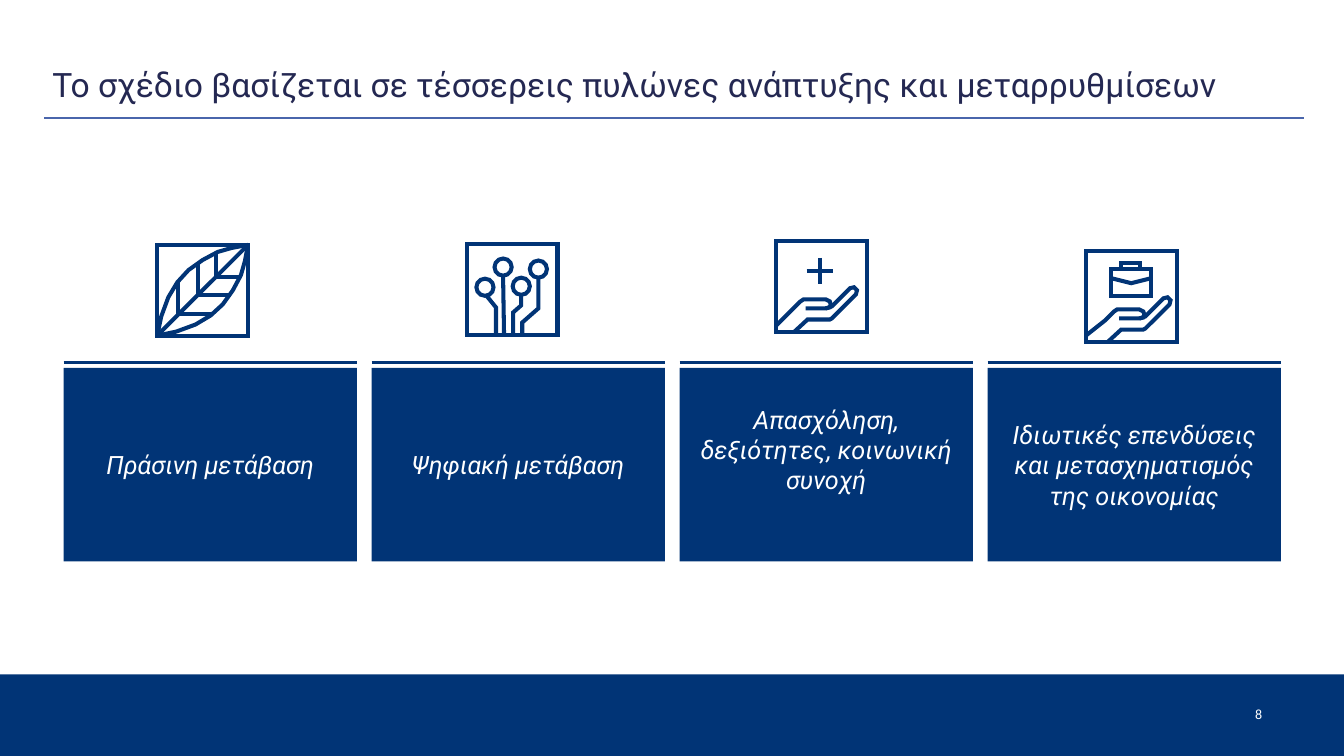
from lxml.etree import SubElement
from pptx import Presentation
from pptx.dml.color import RGBColor
from pptx.enum.shapes import MSO_CONNECTOR, MSO_SHAPE
from pptx.enum.text import MSO_ANCHOR as Anchor, PP_ALIGN as Align
from pptx.oxml.ns import qn
from pptx.util import Inches, Pt

WIDTH, HEIGHT = 13.33, 7.5
COLORS = {"navy": "013476", "title": "242852", "rule": "4A66AC", "white": "FFFFFF"}
CARD_LEFT, CARD_STEP, CARD_WIDTH = 0.63, 3.055, 2.91
CARD_TOP, CARD_HEIGHT, CARD_RULE = 3.65, 1.92, 3.6
ICON_LEFT, ICON_STEP, ICON_UNIT = 1.54, 3.07, 0.01
ICON_LINE = 2.9

FRAME = [(2, 2), (92, 2), (92, 92), (2, 92), (2, 2)]
LEAF_EDGE = [(2, 92), (6, 73), (13, 54), (22, 39), (33, 27),
             (47, 17), (62, 9), (76, 5), (92, 2)]
LEAF_VEINS = [[(23, 38), (23, 71)], [(42, 19), (42, 52)], [(60, 10), (60, 34)]]
CIRCUIT_STEMS = [
    [(38, 33), (39, 92)],
    [(73, 35), (73, 66), (57, 80), (57, 92)],
    [(56, 52), (56, 63), (48, 70), (48, 92)],
    [(22, 54), (31, 65), (31, 92)],
]
CIRCUIT_NODES = [(38, 25), (73, 27), (56, 44), (20, 45)]
NODE_RADIUS = 8.5
PLUS = [[(45, 19), (45, 45)], [(32, 32), (58, 32)]]
BRIEFCASE = [
    [(27, 20), (67, 20), (67, 47), (27, 47), (27, 20)],
    [(37, 20), (37, 14), (56, 14), (56, 20)],
    [(27, 29), (47, 34), (67, 29)],
]
PALM = [(17, 71), (26, 62), (29, 60), (51, 60), (55, 62),
        (56, 65), (55, 68), (51, 69), (31, 69)]
FINGERS = [(51, 69), (57, 67), (75, 49), (79, 48), (82, 51),
           (81, 55), (57, 79), (55, 80), (33, 80), (20, 92)]


def color(name):
    return RGBColor.from_string(COLORS[name])


def mirror(stroke):
    return [(94 - y, 94 - x) for x, y in stroke]


def leaf():
    half = [LEAF_EDGE, *LEAF_VEINS]
    return [*half, *map(mirror, half), [(2, 92), (92, 2)]]


def hand(shift=0):
    palm, fingers = ([(x + shift, y) for x, y in part] for part in (PALM, FINGERS))
    return [[(2, 86), *palm], fingers]


def write(shape, text, size=18, font="Roboto", ink="white", italic=False,
          align=Align.LEFT, anchor=Anchor.TOP, insets=(0.1, 0.1, 0.1, 0.1)):
    frame = shape.text_frame
    frame.word_wrap = True
    frame.vertical_anchor = anchor
    (frame.margin_left, frame.margin_top,
     frame.margin_right, frame.margin_bottom) = map(Inches, insets)
    para = frame.paragraphs[0]
    para.alignment = align
    span = para.add_run()
    span.text = text
    span.font.size = Pt(size)
    span.font.name = font
    span.font.italic = italic
    span.font.color.rgb = color(ink)


def add_label(page, text, left, top, width, height, **style):
    box = page.shapes.add_textbox(*map(Inches, (left, top, width, height)))
    write(box, text, **style)


def add_block(page, left, top, width, height):
    block = page.shapes.add_shape(
        MSO_SHAPE.RECTANGLE, *map(Inches, (left, top, width, height)))
    block.shadow.inherit = False
    block.fill.solid()
    block.fill.fore_color.rgb = color("navy")
    block.line.fill.background()
    return block


def add_rule(page, left, right, y, ink, weight):
    rule = page.shapes.add_connector(
        MSO_CONNECTOR.STRAIGHT, *map(Inches, (left, y, right, y)))
    rule.line.color.rgb = color(ink)
    rule.line.width = Pt(weight)
    SubElement(rule._element.spPr, qn("a:effectLst"))


def outline(shape):
    shape.shadow.inherit = False
    shape.fill.background()
    shape.line.color.rgb = color("navy")
    shape.line.width = Pt(ICON_LINE)
    SubElement(shape.line._get_or_add_ln(), qn("a:miter"), lim="800000")


def add_icon(page, left, top, strokes, nodes=()):
    builder = page.shapes.build_freeform(*FRAME[0], scale=float(Inches(ICON_UNIT)))
    builder.add_line_segments(FRAME[1:], close=True)
    for start, *others in strokes:
        builder.move_to(*start)
        builder.add_line_segments(others, close=False)
    outline(builder.convert_to_shape(Inches(left), Inches(top)))
    size = Inches(2 * NODE_RADIUS * ICON_UNIT)
    for x, y in nodes:
        outline(page.shapes.add_shape(
            MSO_SHAPE.OVAL,
            Inches(left + (x - NODE_RADIUS) * ICON_UNIT),
            Inches(top + (y - NODE_RADIUS) * ICON_UNIT), size, size))


def add_pillar(page, column, text, icon_top, strokes, nodes=(), bottom=0.05):
    left = CARD_LEFT + column * CARD_STEP
    card = add_block(page, left, CARD_TOP, CARD_WIDTH, CARD_HEIGHT)
    write(card, text, italic=True, align=Align.CENTER, anchor=Anchor.MIDDLE,
          insets=(0.1, 0.05, 0.1, bottom))
    add_rule(page, left, left + CARD_WIDTH, CARD_RULE, "navy", 2.25)
    add_icon(page, ICON_LEFT + column * ICON_STEP, icon_top, strokes, nodes)


def main():
    deck = Presentation()
    deck.slide_width, deck.slide_height = Inches(WIDTH), Inches(HEIGHT)
    page = deck.slides.add_slide(deck.slide_layouts[6])

    add_block(page, 0, 6.69, WIDTH, HEIGHT - 6.69)
    add_rule(page, 0.44, 12.93, 1.17, "rule", 1)
    add_label(page, "8", 12.35, 6.8, 0.57, 0.57,
              size=10, font="Calibri", anchor=Anchor.MIDDLE)
    add_label(page, "Το σχέδιο βασίζεται σε τέσσερεις πυλώνες ανάπτυξης και μεταρρυθμίσεων",
              0.42, 0.53, WIDTH - 0.42, 0.84, size=24, ink="title")

    pillars = [
        dict(text="Πράσινη μετάβαση", icon_top=2.41, strokes=leaf()),
        dict(text="Ψηφιακή μετάβαση", icon_top=2.4,
             strokes=CIRCUIT_STEMS, nodes=CIRCUIT_NODES),
        dict(text="Απασχόληση, δεξιότητες, κοινωνική συνοχή", icon_top=2.37,
             strokes=PLUS + hand(), bottom=0.35),
        dict(text="Ιδιωτικές επενδύσεις και μετασχηματισμός της οικονομίας",
             icon_top=2.47, strokes=BRIEFCASE + hand(shift=4)),
    ]
    for column, pillar in enumerate(pillars):
        add_pillar(page, column, **pillar)

    deck.save("out.pptx")


if __name__ == "__main__":
    main()
